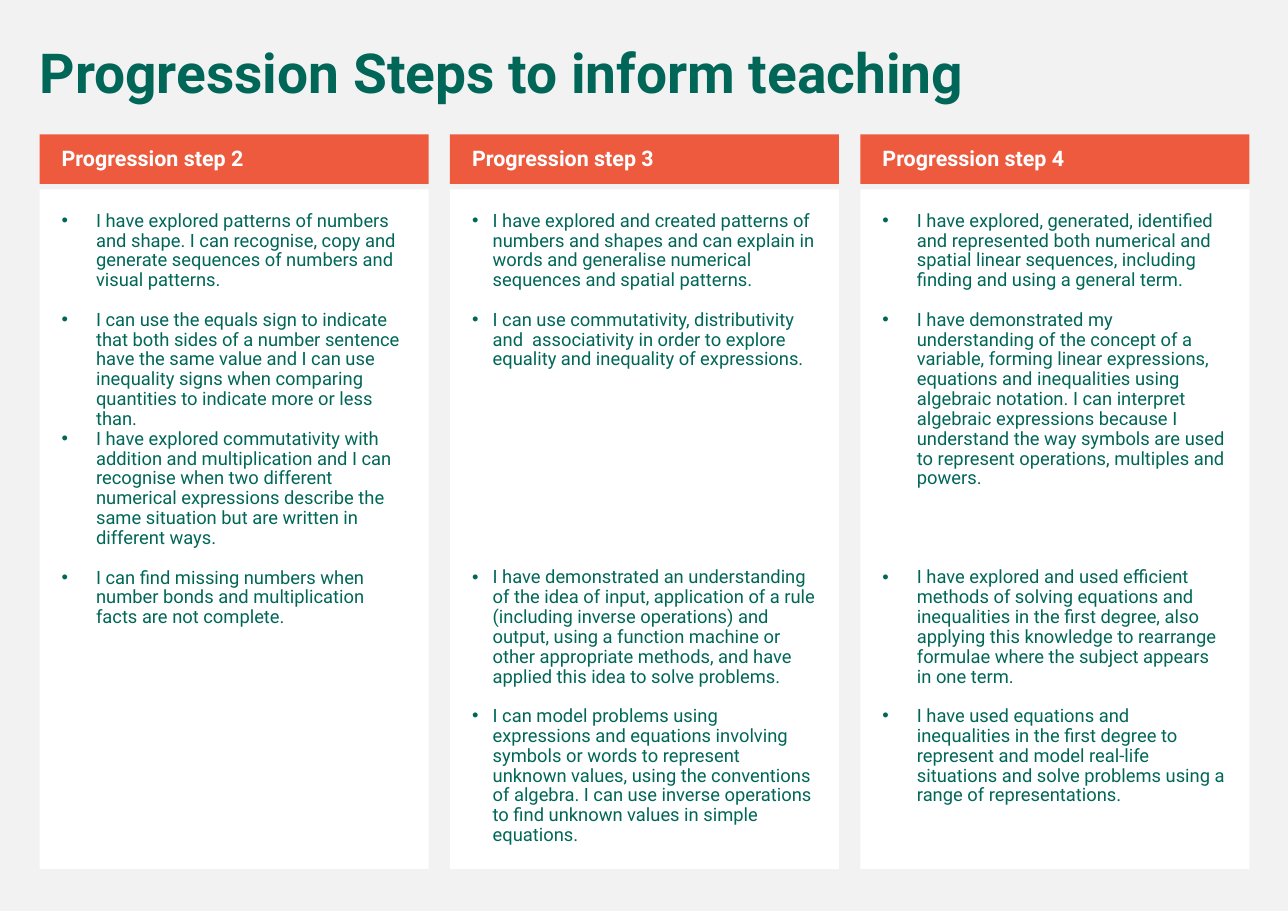
import pptx
import pptx.dml.color
import pptx.enum.shapes
import pptx.enum.text
import pptx.oxml
import pptx.oxml.ns
import pptx.util

Pt = pptx.util.Pt
ANCHOR = pptx.enum.text.MSO_ANCHOR
COLOURS = {"page": "F2F2F2", "panel": "FFFFFF", "band": "ED5A3E",
           "green": "006758", "white": "FFFFFF"}
FONT = "Roboto"
LINE = 12.95  # height of one body line
BAND_HEIGHT, BAND_GAP = 32.4, 3.6
COLUMN_STEP = 268.2

# Each step: heading, bullet indent, and (blank lines above, statement) pairs
STEPS = [
    ("Progression step 2", 22.5, [
        (0, "I have explored patterns of numbers and shape. I can recognise, copy and "
            "generate sequences of numbers and visual patterns."),
        (1, "I can use the equals sign to indicate that both sides of a number sentence "
            "have the same value and I can use inequality signs when comparing "
            "quantities to indicate more or less than."),
        (0, "I have explored commutativity with addition and multiplication and I can "
            "recognise when two different numerical expressions describe the same "
            "situation but are written in different ways."),
        (1, "I can find missing numbers when number bonds and multiplication facts are "
            "not complete."),
    ]),
    ("Progression step 3", 13.5, [
        (0, "I have explored and created patterns of numbers and shapes and can explain "
            "in words and generalise numerical sequences and spatial patterns."),
        (1, "I can use commutativity, distributivity and  associativity in order to "
            "explore equality and inequality of expressions."),
        (10, "I have demonstrated an understanding of the idea of input, application of "
             "a rule (including inverse operations) and output, using a function machine "
             "or other appropriate methods, and have applied this idea to solve problems."),
        (1, "I can model problems using expressions and equations involving symbols or "
            "words to represent unknown values, using the conventions of algebra. I can "
            "use inverse operations to find unknown values in simple equations."),
    ]),
    ("Progression step 4", 22.5, [
        (0, "I have explored, generated, identified and represented both numerical and "
            "spatial linear sequences, including finding and using a general term."),
        (1, "I have demonstrated my understanding of the concept of a variable, forming "
            "linear expressions, equations and inequalities using algebraic notation. I "
            "can interpret algebraic expressions because I understand the way symbols "
            "are used to represent operations, multiples and powers."),
        (4, "I have explored and used efficient methods of solving equations and "
            "inequalities in the first degree, also applying this knowledge to rearrange "
            "formulae where the subject appears in one term."),
        (1, "I have used equations and inequalities in the first degree to represent and "
            "model real-life situations and solve problems using a range of "
            "representations."),
    ]),
]


def rgb(name):
    return pptx.dml.color.RGBColor.from_string(COLOURS[name])


def set_all(target, values):
    for name, value in values.items():
        setattr(target, name, value)


def write(paragraph, text, size, colour, bold=False):
    paragraph.text = text
    set_all(paragraph, {"alignment": pptx.enum.text.PP_ALIGN.LEFT, "line_spacing": 0.9})
    set_all(paragraph.font, {"name": FONT, "size": Pt(size), "bold": bold})
    paragraph.font.color.rgb = rgb(colour)


def add_bullet(paragraph, indent):
    properties = paragraph._p.get_or_add_pPr()
    properties.set("marL", str(Pt(indent)))
    properties.set("indent", str(-Pt(indent)))
    namespace = pptx.oxml.ns.nsdecls("a")
    for xml in (f'<a:buFont {namespace} typeface="Arial"/>',
                f'<a:buChar {namespace} char="•"/>'):
        # Bullets must follow the spacing and precede the run defaults
        properties.insert_element_before(pptx.oxml.parse_xml(xml), "a:defRPr")


def add_block(slide, box, fill, frame_format):
    block = slide.shapes.add_shape(pptx.enum.shapes.MSO_SHAPE.RECTANGLE,
                                   *(Pt(length) for length in box))
    block.shadow.inherit = False
    block.fill.solid()
    block.fill.fore_color.rgb = rgb(fill)
    block.line.fill.background()
    set_all(block.text_frame, {"word_wrap": True, **frame_format})
    return block.text_frame


def add_title(slide, box):
    title = slide.shapes.title
    set_all(title, dict(zip(("left", "top", "width", "height"), map(Pt, box))))
    set_all(title.text_frame, {
        "word_wrap": True, "auto_size": pptx.enum.text.MSO_AUTO_SIZE.NONE,
        "vertical_anchor": ANCHOR.MIDDLE})
    write(title.text_frame.paragraphs[0], "Progression Steps to inform teaching",
          36, "green", bold=True)


def add_step(slide, box, heading, indent, statements):
    left, top, width, height = box

    # Statement panel
    panel_top = BAND_HEIGHT + BAND_GAP
    sides = ("margin_left", "margin_top", "margin_right", "margin_bottom")
    panel = add_block(slide, (left, top + panel_top, width, height - panel_top), "panel",
                      {"vertical_anchor": ANCHOR.TOP, **dict.fromkeys(sides, Pt(14.4))})
    for number, (blank_lines, statement) in enumerate(statements):
        paragraph = panel.add_paragraph() if number else panel.paragraphs[0]
        write(paragraph, statement, 12, "green")
        paragraph.space_before = Pt(blank_lines * LINE)
        add_bullet(paragraph, indent)

    # Heading band
    band = add_block(slide, (left, top, width, BAND_HEIGHT), "band",
                     {"vertical_anchor": ANCHOR.MIDDLE, "margin_left": Pt(14.4)})
    write(band.paragraphs[0], heading, 14, "white", bold=True)


def main():
    deck = pptx.Presentation()
    set_all(deck, {"slide_width": Pt(841.68), "slide_height": Pt(595.44)})
    slide = deck.slides.add_slide(deck.slide_layouts.get_by_name("Title Only"))
    slide.background.fill.solid()
    slide.background.fill.fore_color.rgb = rgb("page")
    add_title(slide, (18.7, 25.9, 797.8, 46.8))
    for number, step in enumerate(STEPS):
        add_step(slide, (25.9 + number * COLUMN_STEP, 87.8, 254.2, 480.2), *step)
    deck.save("out.pptx")


if __name__ == "__main__":
    main()
